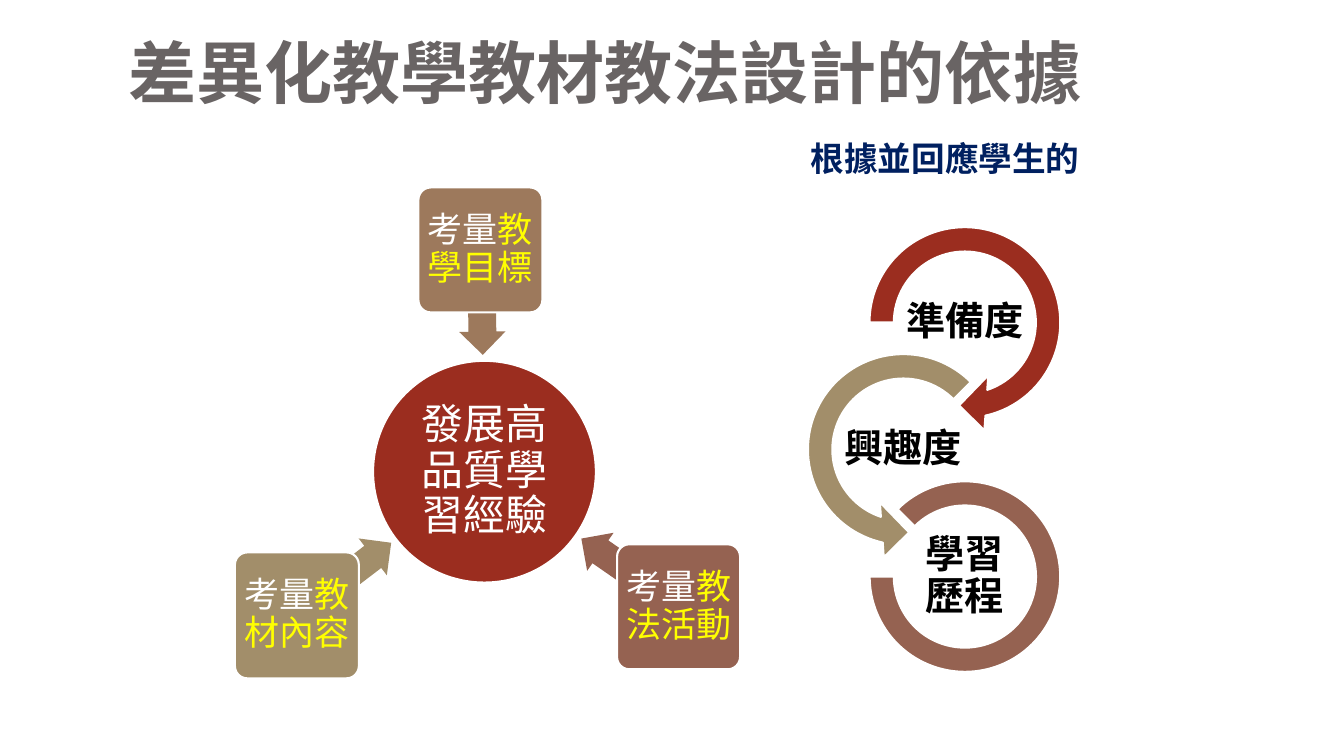
"""Build a slide on what guides differentiated teaching design."""
from lxml.etree import SubElement
from pptx import Presentation
from pptx.dml.color import RGBColor
from pptx.enum.shapes import MSO_SHAPE as Shape
from pptx.enum.text import MSO_ANCHOR as Anchor, MSO_AUTO_SIZE as AutoSize, PP_ALIGN as Align
from pptx.oxml import parse_xml
from pptx.oxml.ns import nsdecls, qn
from pptx.util import Inches, Pt

TITLE = "差異化教學教材教法設計的依據"
SUBTITLE = "根據並回應學生的"
CENTRE = "發展高品質學習經驗"
RED, TAN, BROWN, ROSE = "9B2D1F", "A28E6A", "9D795C", "956251"
WHITE, YELLOW, BLACK = "FFFFFF", "FFFF00", "000000"
CJK_FONT = "Noto Sans CJK SC"

TITLE_FORMAT = {"size": Pt(48.6), "name": "Arial Narrow", "bold": True}
SUBTITLE_FORMAT = {"size": Pt(24), "name": "TeX Gyre Bonum", "bold": True}
CENTRE_FORMAT = {"size": Pt(30), "name": CJK_FONT, "bold": False}
FACTOR_FORMAT = {"size": Pt(25), "name": CJK_FONT, "bold": False}
STEP_FORMAT = {"size": Pt(28), "name": CJK_FONT, "bold": True}

FACTORS = [
    ("教材內容", TAN, (2.33, 5.48, 1.23, 1.25), (2.83, 5.51, 1.17, 0.46), 142.6),
    ("教學目標", BROWN, (4.15, 1.86, 1.23, 1.24), (4.26, 2.77, 1.04, 0.46), 269.1),
    ("教法活動", ROSE, (6.12, 5.4, 1.22, 1.24), (5.66, 5.45, 1.18, 0.46), 34.8),
]
STEPS = [
    ("準備度", RED, Shape.CIRCULAR_ARROW, 9.57, 3.2, 2.2, 1.22,
     (0.11, 11.42, 45, 108, 0.125)),
    ("興趣度", TAN, Shape.LEFT_CIRCULAR_ARROW, 8.96, 4.46, 2.2, 1.22,
     (0.11, 11.42, 63, 189, 0.125)),
    ("學習歷程", ROSE, Shape.BLOCK_ARC, 9.57, 5.72, 1.89, 1.02,
     (135, 108, 0.127)),
]
LABEL_HEIGHT = 0.61


def rgb(color):
    return RGBColor.from_string(color)


def write(shape, runs, values, align=Align.CENTER, anchor=Anchor.MIDDLE, inset=0.02):
    frame = shape.text_frame
    settings = {"word_wrap": True, "auto_size": AutoSize.NONE, "vertical_anchor": anchor}
    for side in ("left", "top", "right", "bottom"):
        settings[f"margin_{side}"] = Inches(inset)
    for name, value in settings.items():
        setattr(frame, name, value)
    paragraph = frame.paragraphs[0]
    for name, value in {"alignment": align, "line_spacing": 0.9, "space_before": Pt(0)}.items():
        setattr(paragraph, name, value)
    for text, color in runs:
        run = paragraph.add_run()
        run.text = text
        for name, value in values.items():
            setattr(run.font, name, value)
        run.font.color.rgb = rgb(color)
        SubElement(run.font._element, qn("a:ea"), typeface=CJK_FONT)
    return paragraph


def add_block(slide, kind, box, color, adjustments=(), outlined=True):
    shape = slide.shapes.add_shape(kind, *map(Inches, box))
    shape.shadow.inherit = False
    shape.fill.solid()
    shape.fill.fore_color.rgb = rgb(color)
    if outlined:
        shape.line.color.rgb = rgb(WHITE)
        shape.line.width = Pt(1.5)
    else:
        shape.line.fill.background()
    for index, value in enumerate(adjustments):
        shape.adjustments[index] = value
    return shape


def place(shape, box):
    for name, value in zip(("left", "top", "width", "height"), box):
        setattr(shape, name, Inches(value))


def add_headings(slide):
    title, body = slide.shapes.title, slide.placeholders[1]
    place(title, (1.17, 0.44, 10, 0.64))
    write(title, [(TITLE, "696464")], TITLE_FORMAT, Align.LEFT, inset=0.1)
    place(body, (7.94, 1.31, 3.54, 0.79))
    paragraph = write(body, [(SUBTITLE, "002060")], SUBTITLE_FORMAT, Align.LEFT, Anchor.TOP, 0.1)
    properties = paragraph._p.get_or_add_pPr()
    properties.set("marL", "0")
    properties.set("indent", "0")
    SubElement(properties, qn("a:buNone"))
    outline = parse_xml(
        f'<a:ln {nsdecls("a")} w="{Pt(0.71)}"><a:solidFill>'
        '<a:srgbClr val="734637"/></a:solidFill></a:ln>')
    paragraph.runs[0].font._element.insert(0, outline)


def add_steps(slide):
    for text, color, kind, x, y, size, width, adjustments in STEPS:
        box = (x - size / 2, y - size / 2, size, size)
        add_block(slide, kind, box, color, adjustments)
        label_box = (x - width / 2, y - LABEL_HEIGHT / 2, width, LABEL_HEIGHT)
        label = slide.shapes.add_textbox(*map(Inches, label_box))
        write(label, [(text, BLACK)], STEP_FORMAT)


def add_factors(slide):
    circle = add_block(slide, Shape.OVAL, (3.7, 3.58, 2.21, 2.2), RED)
    write(circle, [(CENTRE, WHITE)], CENTRE_FORMAT)
    for text, color, box, arrow_box, angle in FACTORS:
        arrow = add_block(slide, Shape.LEFT_ARROW, arrow_box, color, (0.6, 0.5), False)
        arrow.rotation = angle
        card = add_block(slide, Shape.ROUNDED_RECTANGLE, box, color, (0.1,))
        write(card, [("考量", WHITE), (text, YELLOW)], FACTOR_FORMAT, inset=0.04)


def main():
    presentation = Presentation()
    presentation.slide_width, presentation.slide_height = Inches(13.33), Inches(7.5)
    slide = presentation.slides.add_slide(presentation.slide_layouts[1])
    add_headings(slide)
    add_steps(slide)
    add_factors(slide)
    presentation.save("out.pptx")


if __name__ == "__main__":
    main()
